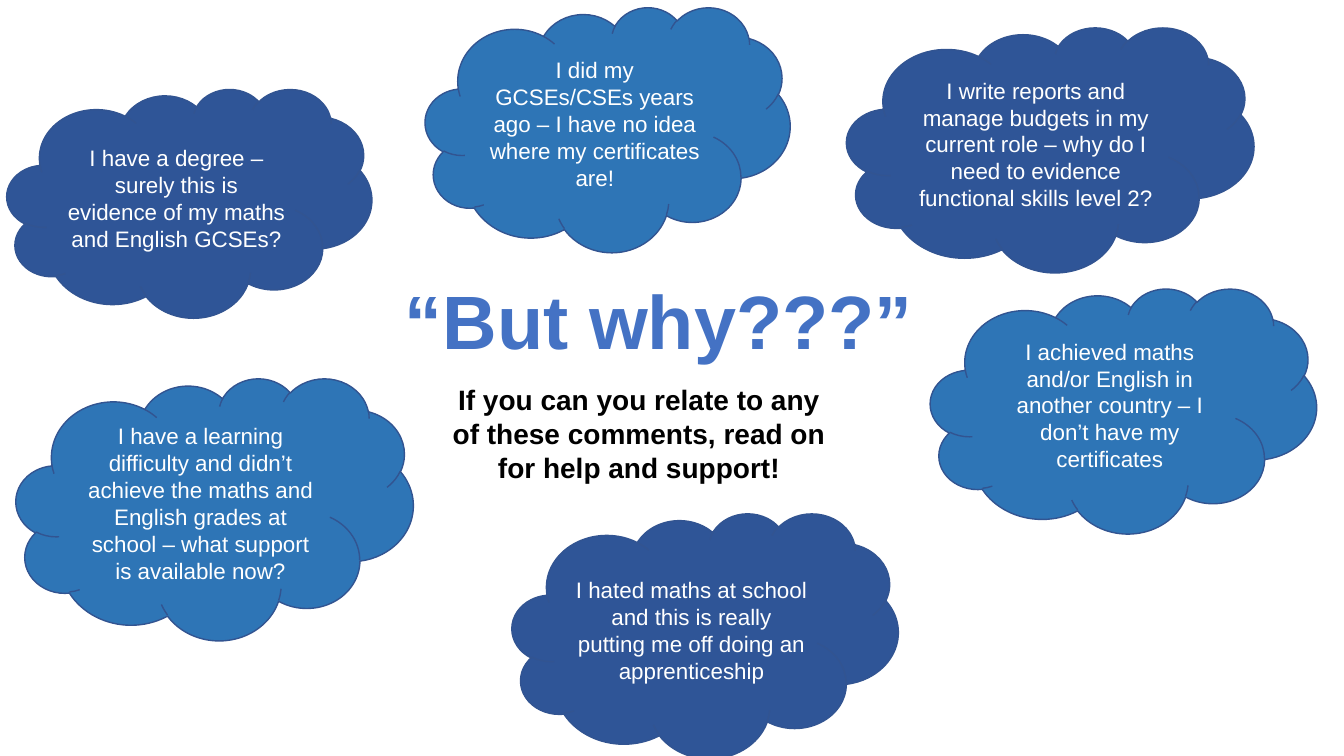
from dataclasses import dataclass

from pptx import Presentation
from pptx.dml.color import RGBColor
from pptx.enum import shapes, text
from pptx.util import Pt


@dataclass(frozen=True)
class Theme:
    font: str = "Arial"
    heading: str = "4472C4"
    body: str = "000000"
    on_cloud: str = "FFFFFF"
    dark: str = "2F5597"
    light: str = "2E75B6"
    outline: str = "325491"
    heading_size: float = 54
    prompt_size: float = 20
    comment_size: float = 16


THEME = Theme()

# Comment, cloud colour, (left, top, width, height) in points
COMMENTS = [
    ("I have a degree – surely this is evidence of my maths and English GCSEs?",
     THEME.dark, (5, 63.4, 260.6, 163.4)),
    ("I did my GCSEs/CSEs years ago – I have no idea where my certificates are!",
     THEME.light, (303.8, 5, 260.6, 175)),
    ("I hated maths at school and this is really putting me off doing an apprenticeship",
     THEME.dark, (365.8, 366.5, 275.8, 175)),
    ("I have a learning difficulty and didn’t achieve the maths and English grades "
     "at school – what support is available now?",
     THEME.light, (11.5, 270, 283.7, 187.2)),
    ("I achieved maths and/or English in another country – I don’t have my certificates",
     THEME.light, (664.6, 205.9, 275.8, 175)),
    ("I write reports and manage budgets in my current role – why do I need to "
     "evidence functional skills level 2?",
     THEME.dark, (604.8, 19.4, 290.9, 175)),
]


def write(frame, words, *, size, color, bold=False, spacing=1.0,
          anchor=text.MSO_ANCHOR.TOP):
    frame.word_wrap = True
    frame.auto_size = text.MSO_AUTO_SIZE.NONE
    frame.vertical_anchor = anchor
    paragraph = frame.paragraphs[0]
    paragraph.alignment = text.PP_ALIGN.CENTER
    paragraph.line_spacing = spacing
    run = paragraph.add_run()
    run.text = words
    run.font.name = THEME.font
    run.font.size = Pt(size)
    run.font.bold = bold
    run.font.color.rgb = RGBColor.from_string(color)


def place_heading(slide, box):
    heading = slide.shapes.title
    heading.left, heading.top, heading.width, heading.height = map(Pt, box)
    write(heading.text_frame, "“But why???”", size=THEME.heading_size,
          color=THEME.heading, bold=True, spacing=0.9,
          anchor=text.MSO_ANCHOR.BOTTOM)


def add_comment_cloud(slide, box, comment, color):
    cloud = slide.shapes.add_shape(shapes.MSO_SHAPE.CLOUD, *map(Pt, box))
    cloud.shadow.inherit = False
    cloud.fill.solid()
    cloud.fill.fore_color.rgb = RGBColor.from_string(color)
    cloud.line.color.rgb = RGBColor.from_string(THEME.outline)
    cloud.line.width = Pt(1)
    write(cloud.text_frame, comment, size=THEME.comment_size,
          color=THEME.on_cloud, anchor=text.MSO_ANCHOR.MIDDLE)


def add_prompt(slide, box):
    prompt = slide.shapes.add_textbox(*map(Pt, box))
    write(prompt.text_frame,
          "If you can you relate to any of these comments, read on for help and support!",
          size=THEME.prompt_size, color=THEME.body, bold=True)


def main():
    deck = Presentation()
    deck.slide_width, deck.slide_height = Pt(960), Pt(540)
    title_only = deck.slide_layouts[5]
    slide = deck.slides.add_slide(title_only)
    place_heading(slide, (224.6, 153.4, 491.8, 111.6))
    for comment, color, box in COMMENTS:
        add_comment_cloud(slide, box, comment, color)
    add_prompt(slide, (311, 270, 290.9, 79.9))
    deck.save("out.pptx")


if __name__ == "__main__":
    main()
